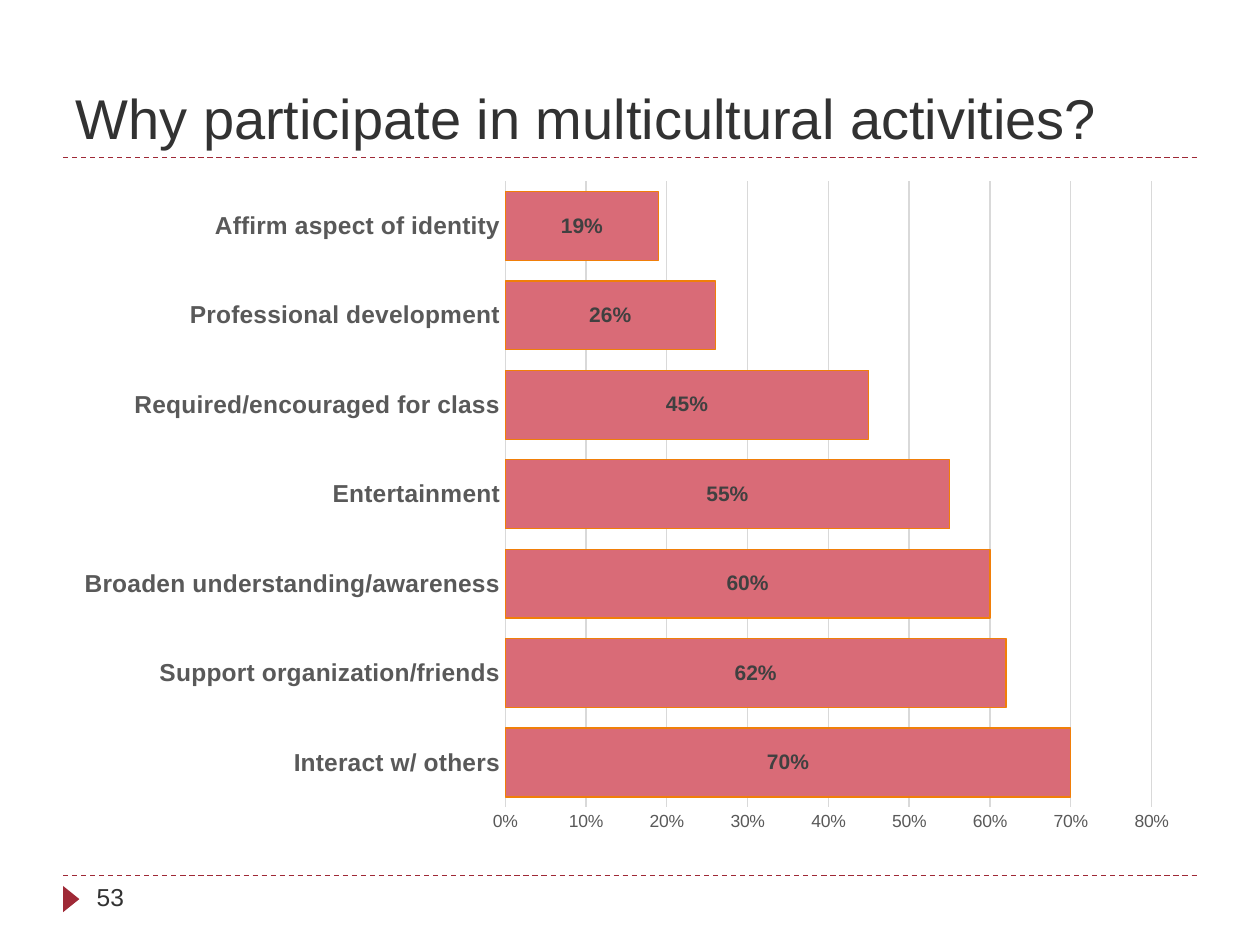
from lxml import etree
from pptx import Presentation
from pptx.chart.data import CategoryChartData
from pptx.dml.color import RGBColor
from pptx.enum.chart import XL_CHART_TYPE, XL_LABEL_POSITION, XL_TICK_MARK
from pptx.enum.dml import MSO_LINE
from pptx.enum.shapes import MSO_CONNECTOR, MSO_SHAPE
from pptx.enum.text import MSO_ANCHOR, MSO_AUTO_SIZE, PP_ALIGN
from pptx.oxml.ns import qn
from pptx.util import Cm, Pt

BAR_STACKED = XL_CHART_TYPE.BAR_STACKED
CENTER = XL_LABEL_POSITION.CENTER
NO_TICK = XL_TICK_MARK.NONE
DASH = MSO_LINE.DASH
STRAIGHT = MSO_CONNECTOR.STRAIGHT
TRIANGLE = MSO_SHAPE.ISOSCELES_TRIANGLE
BOTTOM, LEFT = MSO_ANCHOR.BOTTOM, PP_ALIGN.LEFT
NO_FIT = MSO_AUTO_SIZE.NONE

BLACK = RGBColor(0x00, 0x00, 0x00)
INK = RGBColor(0x32, 0x32, 0x32)
LABEL = RGBColor(0x40, 0x40, 0x40)
AXIS = RGBColor(0x59, 0x59, 0x59)
GRID = RGBColor(0xD9, 0xD9, 0xD9)
RED = RGBColor(0x9F, 0x29, 0x36)
ROSE = RGBColor(0xD9, 0x6B, 0x77)
ORANGE = RGBColor(0xF0, 0x7F, 0x09)

MARGIN, WIDTH = 1.27, 22.86
REASONS = {
    "Interact w/ others": 0.70,
    "Support organization/friends": 0.62,
    "Broaden understanding/awareness": 0.60,
    "Entertainment": 0.55,
    "Required/encouraged for class": 0.45,
    "Professional development": 0.26,
    "Affirm aspect of identity": 0.19,
}


class Deck:
    font = "Arial"
    hairline = Pt(0.75)

    def __init__(self, prs):
        self.s = prs.slides.add_slide(prs.slide_layouts[5])

    def style(self, font, size, color, bold=False):
        font.name, font.size, font.bold = self.font, Pt(size), bold
        font.color.rgb = color

    def stroke(self, line, color):
        line.color.rgb = color
        line.width = self.hairline

    def add_text(self, sp, text, size):
        p = sp.text_frame.paragraphs[0]
        p.alignment = LEFT
        r = p.add_run()
        r.text = text
        self.style(r.font, size, INK)

    def title(self, text, x, y, w, h):
        sp = self.s.shapes.title
        sp.left, sp.top, sp.width, sp.height = Cm(x), Cm(y), Cm(w), Cm(h)
        tf = sp.text_frame
        tf.auto_size, tf.vertical_anchor = NO_FIT, BOTTOM
        self.add_text(sp, text, 32)

    def text_box(self, text, x, y, w, h, size):
        sp = self.s.shapes.add_textbox(Cm(x), Cm(y), Cm(w), Cm(h))
        sp.text_frame.word_wrap = True
        self.add_text(sp, text, size)

    def rule(self, y):
        cn = self.s.shapes.add_connector(
            STRAIGHT, Cm(MARGIN), Cm(y), Cm(MARGIN + WIDTH), Cm(y))
        self.stroke(cn.line, RED)
        cn.line.dash_style = DASH
        etree.SubElement(cn._element.spPr, qn("a:effectLst"))

    def marker(self, x, y, w, h):
        sp = self.s.shapes.add_shape(TRIANGLE, Cm(x), Cm(y), Cm(w), Cm(h))
        sp.rotation = 90
        sp.shadow.inherit = False
        sp.fill.solid()
        sp.fill.fore_color.rgb = RED
        sp.line.fill.background()

    def place_plot(self, chart, **fractions):
        """Fix the inner plot area as fractions of the chart."""
        area = chart._chartSpace.chart.plotArea
        layout = area.find(qn("c:layout"))
        if layout is None:
            layout = etree.Element(qn("c:layout"))
            area.insert(0, layout)
        manual = etree.SubElement(layout, qn("c:manualLayout"))
        settings = {"layoutTarget": "inner", "xMode": "edge", "yMode": "edge",
                    **fractions}
        for tag, val in settings.items():
            etree.SubElement(manual, qn("c:" + tag)).set("val", str(val))

    def bar_chart(self, data, x, y, w, h):
        cd = CategoryChartData(number_format="0%")
        cd.categories = list(data)
        cd.add_series("Series 1", list(data.values()))
        chart = self.s.shapes.add_chart(
            BAR_STACKED, Cm(x), Cm(y), Cm(w), Cm(h), cd).chart
        chart.has_legend = chart.has_title = False
        self.style(chart.font, 10, BLACK)
        self.place_plot(chart, x=0.39, y=0.02, w=0.57, h=0.92)

        # Bars and their labels
        plot = chart.plots[0]
        plot.gap_width, plot.overlap = 30, 100
        plot.vary_by_categories = False
        bars = plot.series[0]
        bars.format.fill.solid()
        bars.format.fill.fore_color.rgb = ROSE
        self.stroke(bars.format.line, ORANGE)
        labels = bars.data_labels
        labels.show_value, labels.position = True, CENTER
        labels.number_format, labels.number_format_is_linked = "0%", False
        self.style(labels.font, 12, LABEL, bold=True)

        # Axes
        cat, val = chart.category_axis, chart.value_axis
        for axis in (cat, val):
            axis.major_tick_mark = axis.minor_tick_mark = NO_TICK
        self.style(cat.tick_labels.font, 14, AXIS, bold=True)
        self.stroke(cat.format.line, GRID)
        self.style(val.tick_labels.font, 10, AXIS)
        val.tick_labels.number_format = "0%"
        val.tick_labels.number_format_is_linked = False
        val.minimum_scale, val.maximum_scale, val.major_unit = 0, 0.8, 0.1
        val.format.line.fill.background()
        self.stroke(val.major_gridlines.format.line, GRID)


def main():
    prs = Presentation()
    prs.slide_width, prs.slide_height = Cm(25.4), Cm(19.05)
    deck = Deck(prs)

    # Frame: rules above and below the chart, page marker
    for y in (17.65, 3.18):
        deck.rule(y)
    deck.marker(1.17, 17.96, 0.53, 0.33)

    # Title, page number, chart
    deck.title("Why participate in multicultural activities?",
               MARGIN, 0.43, WIDTH, 2.74)
    deck.text_box("53", 1.7, 17.65, 5.51, 1.02, 14)
    deck.bar_chart(REASONS, MARGIN, 3.38, WIDTH, 13.72)

    prs.save("out.pptx")


if __name__ == "__main__":
    main()
